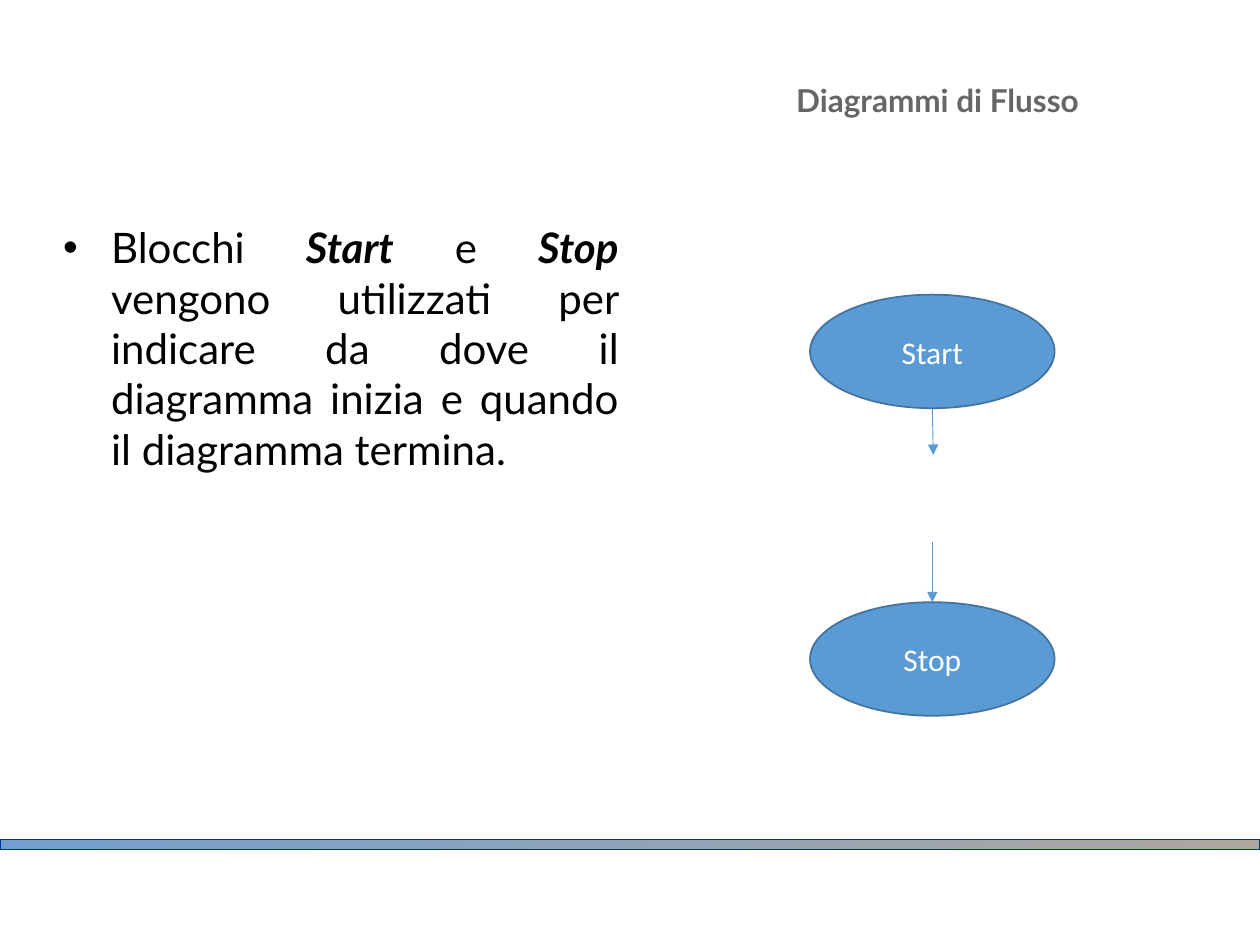
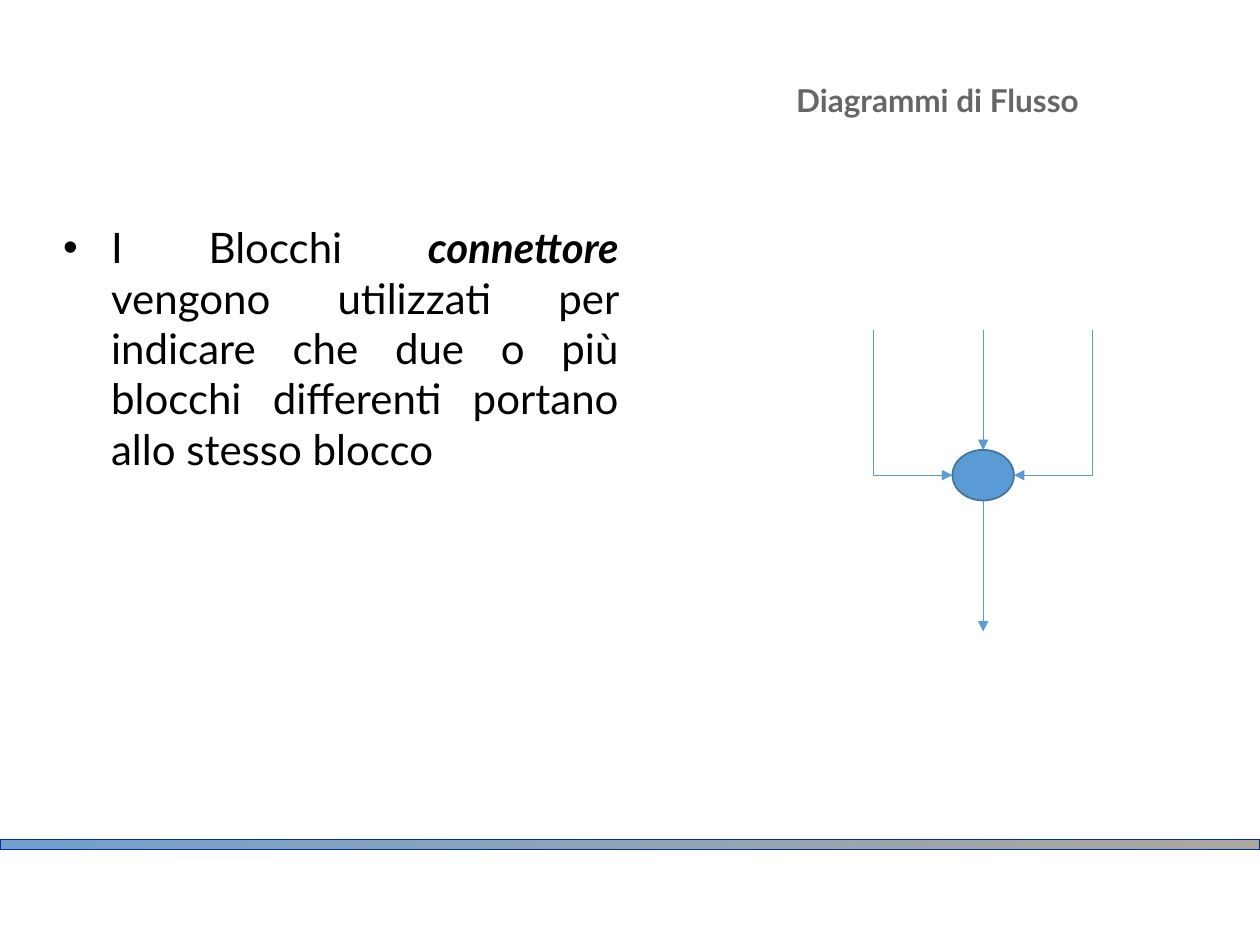
"""Build two slides on the start, stop and connector blocks of flow charts."""
from dataclasses import dataclass

from lxml import etree
from pptx import Presentation
from pptx.dml.color import RGBColor
from pptx.enum.shapes import MSO_CONNECTOR, MSO_SHAPE
from pptx.enum.text import MSO_ANCHOR, MSO_AUTO_SIZE, PP_ALIGN
from pptx.oxml.ns import qn
from pptx.util import Cm, Pt

OVAL, RECTANGLE = MSO_SHAPE.OVAL, MSO_SHAPE.RECTANGLE
STRAIGHT, ELBOW = MSO_CONNECTOR.STRAIGHT, MSO_CONNECTOR.ELBOW
CENTER, JUSTIFY = PP_ALIGN.CENTER, PP_ALIGN.JUSTIFY
TOP, MIDDLE = MSO_ANCHOR.TOP, MSO_ANCHOR.MIDDLE
NO_AUTOFIT = MSO_AUTO_SIZE.NONE
TITLE_AND_CONTENT = 1


@dataclass(frozen=True)
class Theme:
    text_font: str = "Lato"
    block_font: str = "Calibri"
    title_size: int = 18
    body_size: int = 24
    block_size: int = 18
    title: str = "666666"
    body: str = "000000"
    block_text: str = "FFFFFF"
    block: str = "5B9BD5"
    block_edge: str = "43739E"
    band_start: str = "729FCF"
    band_end: str = "AEA79F"
    band_edge: str = "003399"
    block_edge_width: float = 1
    arrow_width: float = 0.5
    band_edge_width: float = 0.75


@dataclass(frozen=True)
class Box:
    left: float
    top: float
    width: float
    height: float

    @property
    def right(self) -> float:
        return self.left + self.width

    @property
    def bottom(self) -> float:
        return self.top + self.height

    @property
    def center(self) -> float:
        return self.left + self.width / 2

    @property
    def middle(self) -> float:
        return self.top + self.height / 2


@dataclass(frozen=True)
class Block:
    box: Box
    label: str = ""


@dataclass(frozen=True)
class Arrow:
    x1: float
    y1: float
    x2: float
    y2: float
    bent: bool = False


@dataclass(frozen=True)
class Lesson:
    body: str
    blocks: list[Block]
    arrows: list[Arrow]


THEME = Theme()
HEADING = "Diagrammi di Flusso"
TITLE_BOX = Box(13.11, 0.58, 11.58, 2.87)
BODY_BOX = Box(1.27, 4.47, 11.2, 11.05)
BAND_BOX = Box(0, 16.92, 25.4, 0.2)
BULLET_INDENT = 0.97

START = Box(16.33, 5.94, 4.93, 2.29)
STOP = Box(16.33, 12.14, 4.93, 2.29)
JOIN = Box(19.2, 9.07, 1.24, 1.02)
INPUT_TOP = 6.65
INPUT_GAP = 2.21

LESSONS = [
    Lesson(
        "Blocchi *Start* e *Stop* vengono utilizzati per indicare da dove "
        "il diagramma inizia e quando il diagramma termina.",
        [Block(START, "Start"), Block(STOP, "Stop")],
        [
            Arrow(START.center, START.bottom, START.center + 0.02, 9.17),
            Arrow(STOP.center, 10.92, STOP.center, STOP.top),
        ],
    ),
    Lesson(
        "I Blocchi *connettore *vengono utilizzati per indicare che due o più "
        "blocchi differenti portano allo stesso blocco",
        [Block(JOIN)],
        [
            Arrow(JOIN.center, INPUT_TOP, JOIN.center, JOIN.top),
            Arrow(JOIN.center, JOIN.bottom, JOIN.center, 12.73),
            Arrow(JOIN.center - INPUT_GAP, INPUT_TOP, JOIN.left, JOIN.middle, bent=True),
            Arrow(JOIN.center + INPUT_GAP, INPUT_TOP, JOIN.right, JOIN.middle, bent=True),
        ],
    ),
]


def rgb(value: str) -> RGBColor:
    return RGBColor.from_string(value)


def place(shape, box: Box) -> None:
    shape.left, shape.top = Cm(box.left), Cm(box.top)
    shape.width, shape.height = Cm(box.width), Cm(box.height)


def add_bullet(paragraph) -> None:
    properties = paragraph._p.get_or_add_pPr()
    properties.set("marL", str(Cm(BULLET_INDENT)))
    properties.set("indent", str(-Cm(BULLET_INDENT)))
    etree.SubElement(properties, qn("a:buFont"), typeface="Arial")
    etree.SubElement(properties, qn("a:buChar"), char="•")


def write(shape, text: str, *, font: str, size: float, color: str,
          align=CENTER, anchor=MIDDLE, bold=False, bullet=False, inset=True) -> None:
    """Write text in a shape, with the parts between asterisks in bold italics."""
    frame = shape.text_frame
    frame.word_wrap = True
    frame.auto_size = NO_AUTOFIT
    frame.vertical_anchor = anchor
    if not inset:
        frame.margin_left = frame.margin_right = 0
        frame.margin_top = frame.margin_bottom = 0
    paragraph = frame.paragraphs[0]
    if bullet:
        add_bullet(paragraph)
    paragraph.alignment = align
    paragraph.space_before = Pt(0)
    for index, part in enumerate(text.split("*")):
        emphasis = index % 2 == 1
        run = paragraph.add_run()
        run.text = part
        run.font.name, run.font.size = font, Pt(size)
        run.font.color.rgb = rgb(color)
        run.font.bold, run.font.italic = bold or emphasis, emphasis


def outline(shape, color: str, width: float) -> None:
    shape.line.color.rgb = rgb(color)
    shape.line.width = Pt(width)


def add_figure(slide, kind, box: Box, edge: str, edge_width: float):
    figure = slide.shapes.add_shape(
        kind, Cm(box.left), Cm(box.top), Cm(box.width), Cm(box.height))
    figure.shadow.inherit = False
    outline(figure, edge, edge_width)
    return figure


def draw_band(slide) -> None:
    band = add_figure(slide, RECTANGLE, BAND_BOX, THEME.band_edge, THEME.band_edge_width)
    band.fill.gradient()
    band.fill.gradient_angle = 285
    for stop, color in zip(band.fill.gradient_stops, (THEME.band_start, THEME.band_end)):
        stop.color.rgb = rgb(color)


def draw_block(slide, block: Block) -> None:
    oval = add_figure(slide, OVAL, block.box, THEME.block_edge, THEME.block_edge_width)
    oval.fill.solid()
    oval.fill.fore_color.rgb = rgb(THEME.block)
    if block.label:
        write(oval, block.label, font=THEME.block_font, size=THEME.block_size,
              color=THEME.block_text)


def add_bent_line(slide, arrow: Arrow):
    """Add a line that runs down and then sideways, as a rotated two-part elbow."""
    center, middle = (arrow.x1 + arrow.x2) / 2, (arrow.y1 + arrow.y2) / 2
    half_run = (arrow.y2 - arrow.y1) / 2
    half_rise = abs(arrow.x2 - arrow.x1) / 2
    rightward = arrow.x2 > arrow.x1
    if rightward:
        half_run = -half_run
    line = slide.shapes.add_connector(
        ELBOW, Cm(center - half_run), Cm(middle - half_rise),
        Cm(center + half_run), Cm(middle + half_rise))
    properties = line._element.spPr
    properties.find(qn("a:prstGeom")).set("prst", "bentConnector2")
    properties.find(qn("a:xfrm")).set("rot", str((270 if rightward else 90) * 60000))
    return line


def draw_arrow(slide, arrow: Arrow) -> None:
    if arrow.bent:
        line = add_bent_line(slide, arrow)
    else:
        line = slide.shapes.add_connector(
            STRAIGHT, Cm(arrow.x1), Cm(arrow.y1), Cm(arrow.x2), Cm(arrow.y2))
    outline(line, THEME.block, THEME.arrow_width)
    properties = line._element.spPr
    etree.SubElement(properties.find(qn("a:ln")), qn("a:tailEnd"), type="triangle")
    etree.SubElement(properties, qn("a:effectLst"))


def draw_lesson(deck, lesson: Lesson) -> None:
    slide = deck.slides.add_slide(deck.slide_layouts[TITLE_AND_CONTENT])
    draw_band(slide)
    heading, body = slide.shapes.title, slide.placeholders[1]
    place(heading, TITLE_BOX)
    write(heading, HEADING, font=THEME.text_font, size=THEME.title_size,
          color=THEME.title, bold=True)
    place(body, BODY_BOX)
    write(body, lesson.body, font=THEME.text_font, size=THEME.body_size,
          color=THEME.body, align=JUSTIFY, anchor=TOP, bullet=True, inset=False)
    for arrow in lesson.arrows:
        draw_arrow(slide, arrow)
    for block in lesson.blocks:
        draw_block(slide, block)


def main() -> None:
    deck = Presentation()
    deck.slide_width, deck.slide_height = Cm(25.4), Cm(19.05)
    for lesson in LESSONS:
        draw_lesson(deck, lesson)
    deck.save("out.pptx")


if __name__ == "__main__":
    main()
